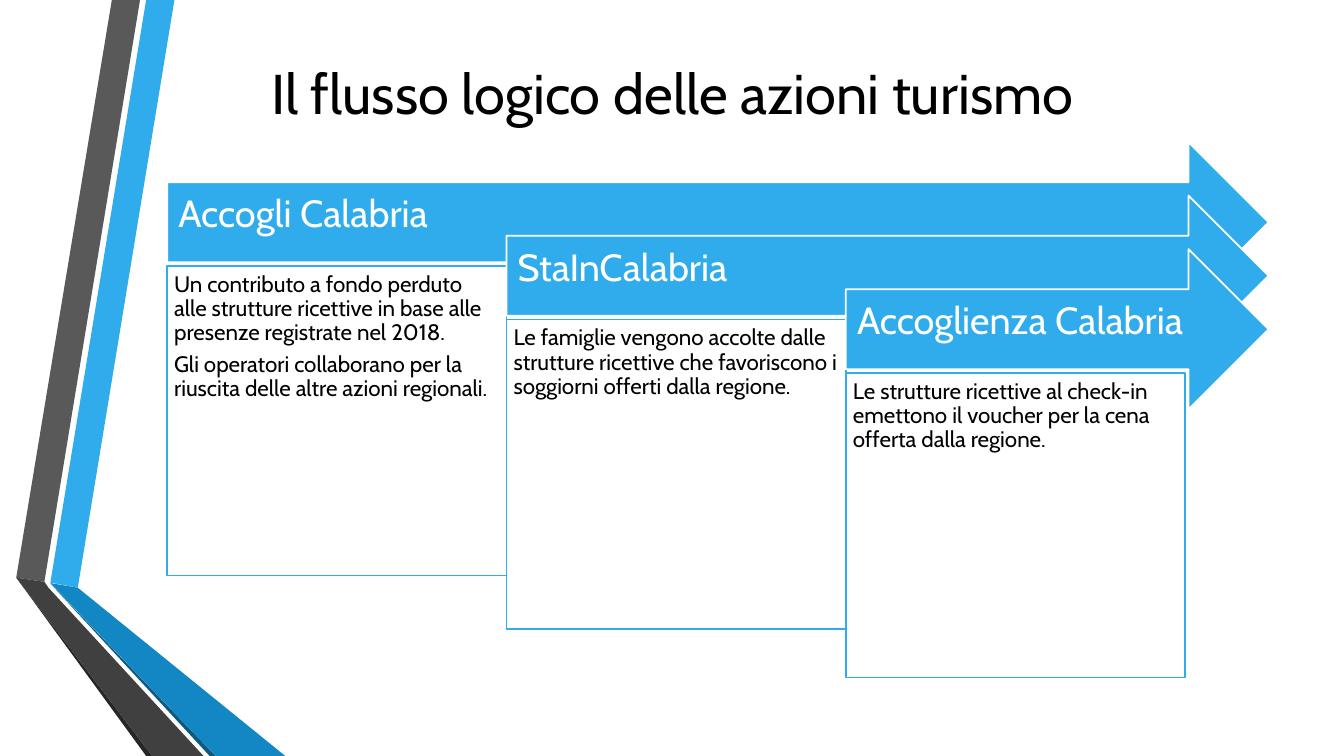
from pptx import Presentation
from pptx.dml.color import RGBColor
from pptx.enum.shapes import MSO_SHAPE
from pptx.enum.text import MSO_ANCHOR, MSO_AUTO_SIZE, PP_ALIGN
from pptx.util import Pt

FONT = "Cabin"
WHITE = RGBColor(0xFF, 0xFF, 0xFF)
BLACK = RGBColor(0x00, 0x00, 0x00)
BLUE = RGBColor(0x30, 0xAC, 0xEC)
OCEAN = RGBColor(0x12, 0x87, 0xC3)
NAVY = RGBColor(0x0C, 0x5A, 0x82)
GREY = RGBColor(0x59, 0x59, 0x59)
DARK = RGBColor(0x40, 0x40, 0x40)
COAL = RGBColor(0x26, 0x26, 0x26)

BANDS = [
    (BLUE, [(36, 416.2), (55.6, 419.8), (124.6, 0), (104.4, 0)]),
    (GREY, [(100, 0), (79.9, 0), (11.6, 412.6), (31.7, 415.6)]),
    (COAL, [(11.6, 412.6), (104.4, 540), (108.7, 540)]),
    (NAVY, [(36, 416.9), (149.8, 540), (154.1, 540)]),
    (OCEAN, [(36, 416.5), (154.1, 540), (203.8, 540), (55.6, 419.8)]),
    (DARK, [(145.4, 540), (34.6, 419.8), (31.7, 415.6), (11.6, 412.6), (108.7, 540)]),
]

STEPS = [
    ("Accogli Calabria", 221, [
        "Un contributo a fondo perduto alle strutture ricettive in base alle "
        "presenze registrate nel 2018.",
        "Gli operatori collaborano per la riuscita delle altre azioni regionali.",
    ]),
    ("StaInCalabria", 221, [
        "Le famiglie vengono accolte dalle strutture ricettive che favoriscono i "
        "soggiorni offerti dalla regione.",
    ]),
    ("Accoglienza Calabria", 217.5, [
        "Le strutture ricettive al check-in emettono il voucher per la cena "
        "offerta dalla regione.",
    ]),
]

LEFT, RIGHT, WIDTH = 119.4, 906.2, 242.4
TOP, DROP, TALL = 101.6, 38.2, 114.4
GAP = 88.5


def band(slide, color, points):
    """Draw one filled polygon of the side ribbon."""
    (x, y), *rest = points
    pen = slide.shapes.build_freeform(Pt(x), Pt(y))
    pen.add_line_segments([(Pt(a), Pt(b)) for a, b in rest])
    shape = pen.convert_to_shape()
    shape.shadow.inherit = False
    shape.fill.solid()
    shape.fill.fore_color.rgb = color
    shape.line.fill.background()


def block(slide, kind, box, fill, edge):
    """Add a filled and outlined preset shape."""
    shape = slide.shapes.add_shape(kind, *map(Pt, box))
    shape.shadow.inherit = False
    shape.fill.solid()
    shape.fill.fore_color.rgb = fill
    shape.line.color.rgb = edge
    shape.line.width = Pt(1.25)
    return shape


def style(para, size, color, align=PP_ALIGN.LEFT):
    """Set font and alignment of a paragraph."""
    para.alignment = align
    para.font.name = FONT
    para.font.size = Pt(size)
    para.font.color.rgb = color


def write(shape, lines, size, color, anchor, inset):
    """Fill a shape with left-aligned paragraphs."""
    frame = shape.text_frame
    frame.word_wrap = True
    frame.vertical_anchor = anchor
    (frame.margin_left, frame.margin_top,
     frame.margin_right, frame.margin_bottom) = map(Pt, inset)
    frame.text = "\n".join(lines)
    for para in frame.paragraphs:
        style(para, size, color)
        para.line_spacing = 0.9
        para.space_after = Pt(size * 0.35)


def step(slide, index, name, height, lines):
    """Draw one arrow with the card below it."""
    x, y = LEFT + index * WIDTH, TOP + index * DROP
    arrow = block(slide, MSO_SHAPE.RIGHT_ARROW, (x, y, RIGHT - x, TALL), BLUE, WHITE)
    write(arrow, [name], 27, WHITE, MSO_ANCHOR.MIDDLE, (8, 8, 20, 18))
    card = block(slide, MSO_SHAPE.RECTANGLE, (x, y + GAP, WIDTH, height), WHITE, BLUE)
    write(card, lines, 16, BLACK, MSO_ANCHOR.TOP, (5, 5, 5, 5))


def head(slide, text):
    """Place and format the title."""
    title = slide.shapes.title
    title.left, title.top, title.width, title.height = map(Pt, (66.2, 28.8, 828, 73.4))
    frame = title.text_frame
    frame.text = text
    frame.auto_size = MSO_AUTO_SIZE.NONE
    frame.vertical_anchor = MSO_ANCHOR.MIDDLE
    style(frame.paragraphs[0], 40, BLACK, PP_ALIGN.CENTER)


def main():
    """Build and save the slide."""
    deck = Presentation()
    deck.slide_width, deck.slide_height = Pt(960), Pt(540)
    slide = deck.slides.add_slide(deck.slide_layouts[5])
    for color, points in BANDS:
        band(slide, color, points)
    head(slide, "Il flusso logico delle azioni turismo")
    for index, (name, height, lines) in enumerate(STEPS):
        step(slide, index, name, height, lines)
    deck.save("out.pptx")


if __name__ == "__main__":
    main()
